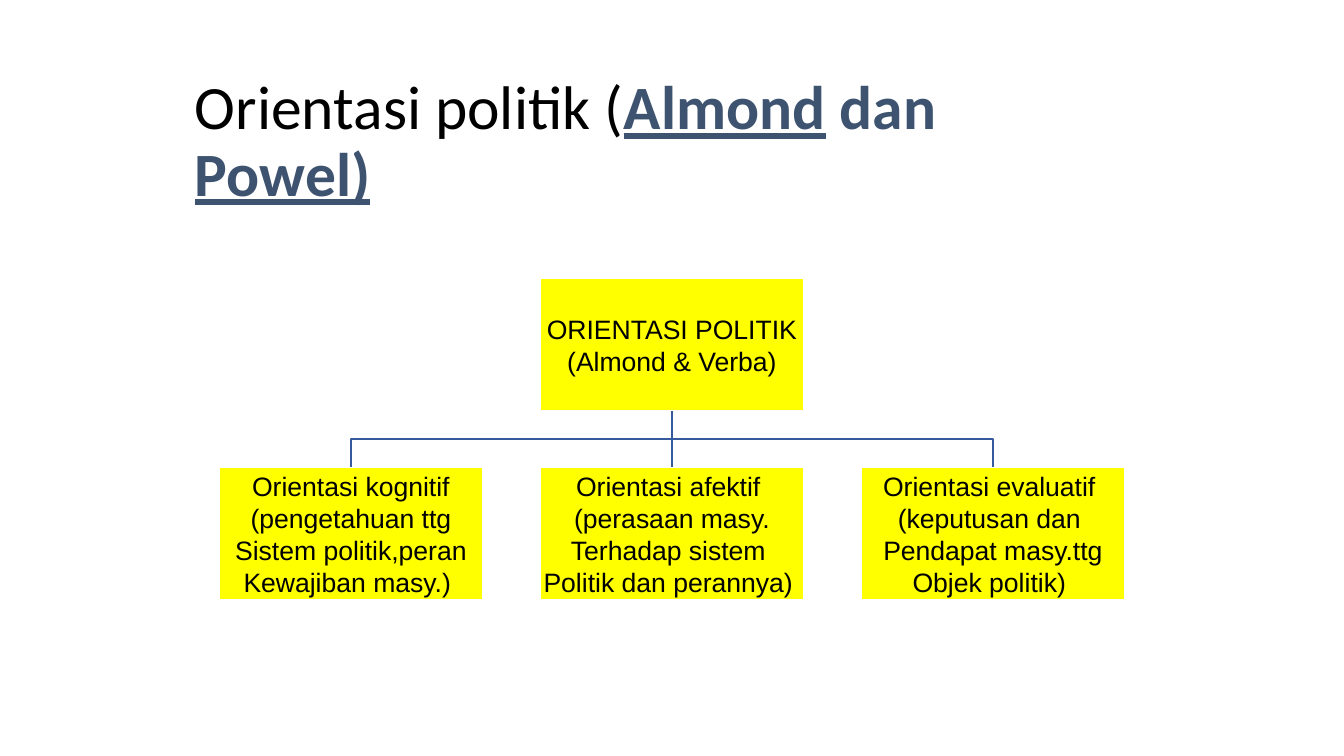
from lxml.etree import SubElement
from pptx import Presentation
from pptx.dml.color import RGBColor
from pptx.enum.shapes import MSO_CONNECTOR, MSO_SHAPE
from pptx.enum.text import MSO_ANCHOR, PP_ALIGN
from pptx.oxml.ns import qn
from pptx.util import Emu, Pt

PX = 914400 / 100.8

BLACK = RGBColor(0x00, 0x00, 0x00)
WHITE = RGBColor(0xFF, 0xFF, 0xFF)
YELLOW = RGBColor(0xFF, 0xFF, 0x00)
BLUE = RGBColor(0x36, 0x5B, 0x9D)
SLATE = RGBColor(0x3E, 0x53, 0x70)

BOX_W, BOX_H = 264, 133

TITLE_RUNS = [  # text, colour, bold, underline
    ("Orientasi politik (", BLACK, False, False),
    ("Almond", SLATE, True, True),
    (" dan ", SLATE, True, False),
    ("Powel)", SLATE, True, True),
]
ROOT = ["ORIENTASI POLITIK", "(Almond & Verba)"]
ORIENTATIONS = [
    ["Orientasi kognitif", "(pengetahuan ttg", "Sistem politik,peran", "Kewajiban masy.) "],
    ["Orientasi afektif ", "(perasaan masy.", "Terhadap sistem ", "Politik dan perannya) "],
    ["Orientasi evaluatif ", "(keputusan dan ", "Pendapat masy.ttg", "Objek politik) "],
]


def px(length):
    return Emu(round(length * PX))


def add_title(slide, left, top, width, height):
    frame = slide.shapes.add_textbox(px(left), px(top), px(width), px(height)).text_frame
    frame.word_wrap = True
    frame.vertical_anchor = MSO_ANCHOR.MIDDLE
    heading = frame.paragraphs[0]
    heading.line_spacing = 0.9
    for text, colour, bold, underline in TITLE_RUNS:
        run = heading.add_run()
        run.text = text
        font = run.font
        font.name, font.size = "Calibri", Pt(44)
        font.bold, font.underline = bold, underline
        font.color.rgb = colour


def add_box(slide, left, top, lines):
    box = slide.shapes.add_shape(MSO_SHAPE.RECTANGLE, px(left), px(top), px(BOX_W), px(BOX_H))
    box.shadow.inherit = False
    box.fill.solid()
    box.fill.fore_color.rgb = YELLOW
    box.line.color.rgb = WHITE
    box.line.width = Pt(1)
    frame = box.text_frame
    frame.word_wrap = True
    frame.vertical_anchor = MSO_ANCHOR.MIDDLE
    frame.margin_left = frame.margin_right = frame.margin_top = frame.margin_bottom = px(1)
    frame.text = "\n".join(lines)
    for paragraph in frame.paragraphs:
        paragraph.alignment = PP_ALIGN.CENTER
        font = paragraph.runs[0].font
        font.name, font.size = "Arial", Pt(19)
        font.color.rgb = BLACK
    return box


def style_line(branch):
    branch.line.color.rgb = BLUE
    branch.line.width = Pt(1)


def link_straight(slide, parent, child):
    branch = slide.shapes.add_connector(MSO_CONNECTOR.STRAIGHT, 0, 0, 0, 0)
    branch.begin_connect(parent, 2)
    branch.end_connect(child, 0)
    SubElement(branch._element.spPr, qn("a:effectLst"))
    style_line(branch)


def link_bent(slide, parent, child):
    """Go down from the parent, across at half height and down to the child."""
    start_x = parent.left + parent.width // 2
    start_y = parent.top + parent.height
    end_x = child.left + child.width // 2
    middle_y = (start_y + child.top) // 2
    builder = slide.shapes.build_freeform(start_x, start_y)
    builder.add_line_segments(
        [(start_x, middle_y), (end_x, middle_y), (end_x, child.top)], close=False)
    branch = builder.convert_to_shape()
    branch.shadow.inherit = False
    branch.fill.background()
    style_line(branch)


def add_hierarchy(slide, left, top, width, height):
    step = (width - BOX_W) // (len(ORIENTATIONS) - 1)
    root = add_box(slide, left + (width - BOX_W) // 2, top, ROOT)
    for column, lines in enumerate(ORIENTATIONS):
        child = add_box(slide, left + column * step, top + height - BOX_H, lines)
        link = link_straight if child.left == root.left else link_bent
        link(slide, root, child)


def main():
    deck = Presentation()
    deck.slide_width, deck.slide_height = px(1344), px(756)
    slide = deck.slides.add_slide(deck.slide_layouts[6])
    add_title(slide, 185, 76, 940, 134)
    add_hierarchy(slide, 219, 278, 906, 322)
    deck.save("out.pptx")


if __name__ == "__main__":
    main()
